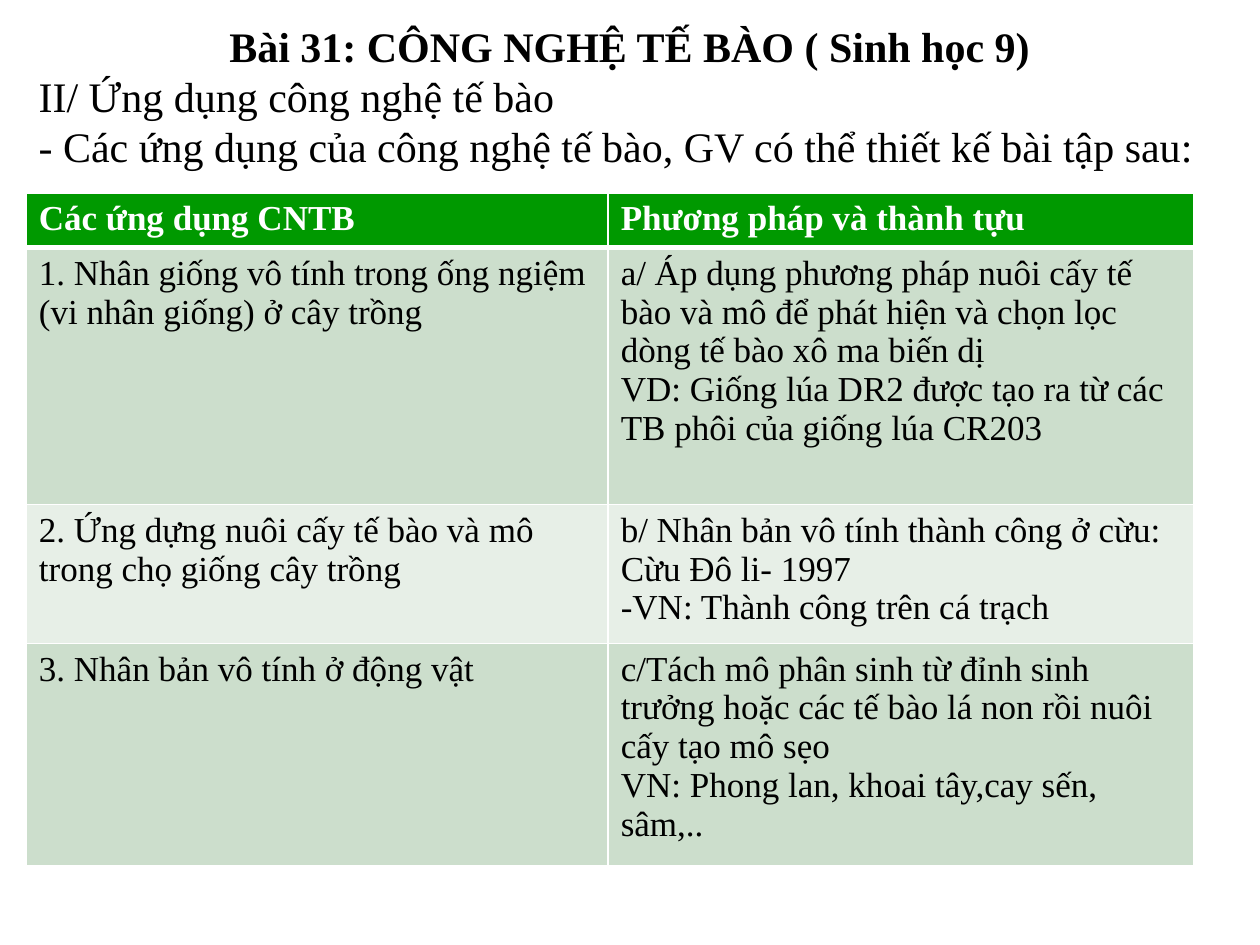
from dataclasses import dataclass

import pptx
import pptx.dml.color
import pptx.enum.text
import pptx.oxml
import pptx.oxml.ns
import pptx.util
from pptx.util import Cm

RGB = pptx.dml.color.RGBColor.from_string
ALIGN = pptx.enum.text.PP_ALIGN


@dataclass(frozen=True)
class Theme:
    font: str = "Times New Roman"
    heading_size: int = 24
    table_size: int = 20
    text: str = "000000"
    light: str = "FFFFFF"
    header_fill: str = "009900"
    band_fills: tuple = ("CCDECC", "E7EFE7")
    border: float = 1
    header_rule: float = 3


THEME = Theme()

TITLE = "Bài 31: CÔNG NGHỆ TẾ BÀO ( Sinh học 9)"
INTRO = [
    "II/ Ứng dụng công nghệ tế bào",
    "- Các ứng dụng của công nghệ tế bào, GV có thể thiết kế bài tập sau:",
]

# Each cell is a list of paragraphs.
ROWS = [
    (["Các ứng dụng CNTB"], ["Phương pháp và thành tựu"]),
    (
        ["1. Nhân giống vô tính trong ống ngiệm (vi nhân giống) ở cây trồng"],
        ["a/ Áp dụng phương pháp nuôi cấy tế bào và mô để phát hiện và chọn lọc "
         "dòng tế bào xô ma biến dị",
         "VD: Giống lúa DR2 được tạo ra từ các TB phôi của giống lúa CR203"],
    ),
    (
        ["2. Ứng dựng nuôi cấy tế bào và mô trong chọ giống cây trồng"],
        ["b/ Nhân bản vô tính thành công ở cừu: Cừu Đô li- 1997",
         "-VN: Thành công trên cá trạch"],
    ),
    (
        ["3. Nhân bản vô tính ở động vật"],
        ["c/Tách mô phân sinh từ đỉnh sinh trưởng hoặc các tế bào lá non rồi nuôi "
         "cấy tạo mô sẹo",
         "VN: Phong lan, khoai tây,cay sến, sâm,.."],
    ),
]
COL_WIDTHS = [Cm(11.73), Cm(11.81)]
ROW_HEIGHTS = [Cm(1.07), Cm(5.18), Cm(2.8), Cm(4.48)]


def add_run(p, text, size, color, bold=False):
    r = p.add_run()
    r.text = text
    r.font.name = THEME.font
    r.font.size = pptx.util.Pt(size)
    r.font.bold = bold
    r.font.color.rgb = RGB(color)


def paragraphs(tf, count):
    """Return the first paragraph of the frame and as many new ones as needed."""
    return [tf.paragraphs[0]] + [tf.add_paragraph() for _ in range(count - 1)]


def add_heading(slide):
    sp = slide.shapes.add_textbox(Cm(0.53), Cm(0.28), Cm(24.33), Cm(5.38))
    tf = sp.text_frame
    tf.word_wrap = True
    tf.auto_size = pptx.enum.text.MSO_AUTO_SIZE.SHAPE_TO_FIT_TEXT
    title, *intro = paragraphs(tf, 1 + len(INTRO))
    title.alignment = ALIGN.CENTER
    add_run(title, TITLE, THEME.heading_size, THEME.text, bold=True)
    for p, text in zip(intro, INTRO):
        add_run(p, text, THEME.heading_size, THEME.text)


def set_borders(cell, widths):
    """Draw the sides in widths (tag to points); lines must precede the fill."""
    tc_pr = cell._tc.get_or_add_tcPr()
    for i, (side, width) in enumerate(widths.items()):
        ln = pptx.oxml.parse_xml(
            f'<a:{side} {pptx.oxml.ns.nsdecls("a")} w="{pptx.util.Pt(width)}">'
            f'<a:solidFill><a:srgbClr val="{THEME.light}"/></a:solidFill></a:{side}>'
        )
        tc_pr.insert(i, ln)


def fill_cell(cell, texts, row):
    header = row == 0
    fill = THEME.header_fill if header else THEME.band_fills[(row - 1) % 2]
    cell.fill.solid()
    cell.fill.fore_color.rgb = RGB(fill)
    set_borders(cell, {
        "lnL": THEME.border,
        "lnR": THEME.border,
        "lnT": THEME.header_rule if row == 1 else THEME.border,
        "lnB": THEME.header_rule if header else THEME.border,
    })
    color = THEME.light if header else THEME.text
    for p, text in zip(paragraphs(cell.text_frame, len(texts)), texts):
        add_run(p, text, THEME.table_size, color, bold=header)


def add_applications_table(slide):
    frame = slide.shapes.add_table(
        len(ROWS), len(COL_WIDTHS), Cm(0.53), Cm(3.89),
        sum(COL_WIDTHS), sum(ROW_HEIGHTS),
    )
    table = frame.table
    for column, width in zip(table.columns, COL_WIDTHS):
        column.width = width
    for i, (height, texts) in enumerate(zip(ROW_HEIGHTS, ROWS)):
        table.rows[i].height = height
        for j, cell_texts in enumerate(texts):
            fill_cell(table.cell(i, j), cell_texts, i)


def main():
    prs = pptx.Presentation()
    prs.slide_width, prs.slide_height = Cm(25.4), Cm(19.05)
    slide = prs.slides.add_slide(prs.slide_layouts[6])
    add_heading(slide)
    add_applications_table(slide)
    prs.save("out.pptx")


if __name__ == "__main__":
    main()
